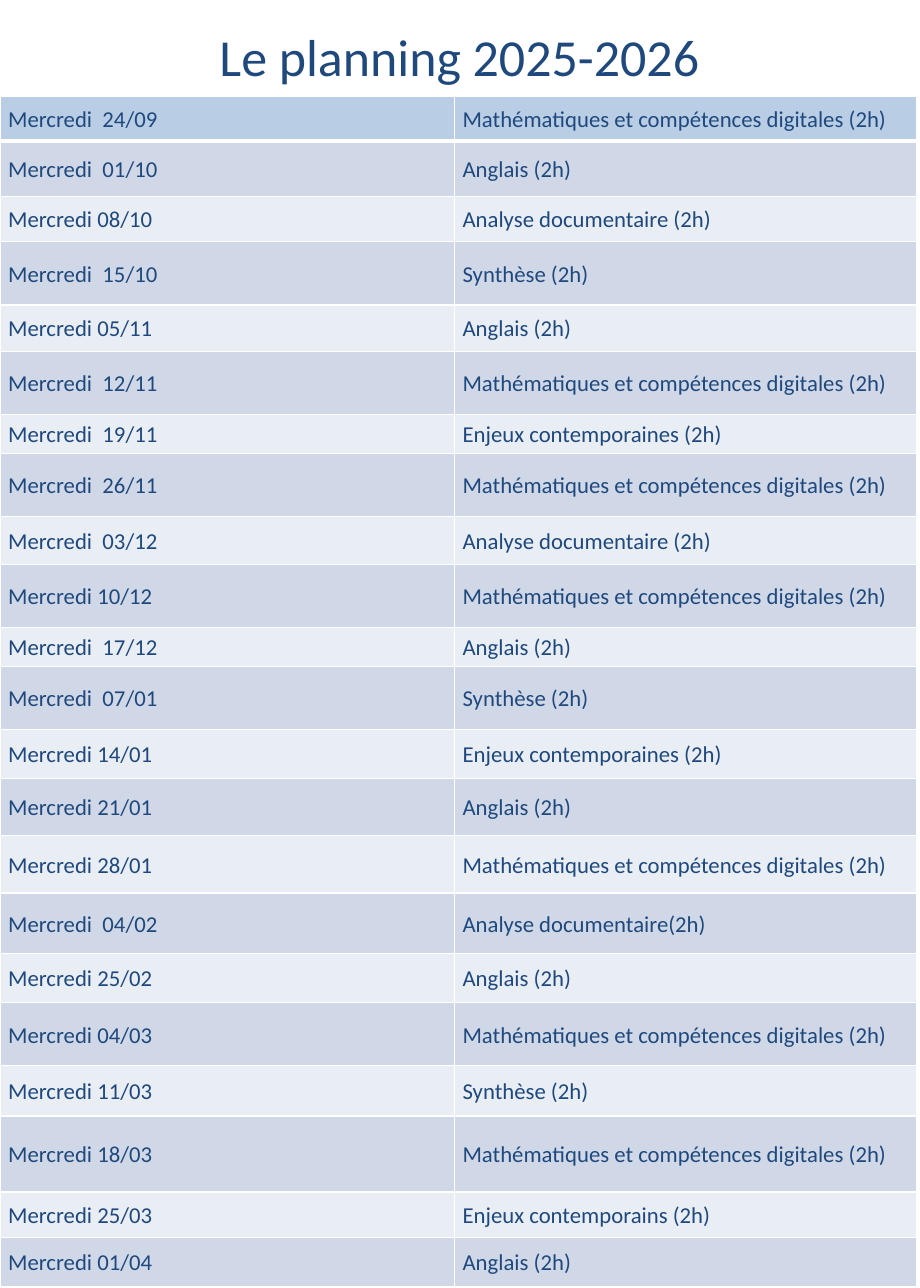
from lxml import etree
from pptx import Presentation
from pptx.dml.color import RGBColor
from pptx.enum import text
from pptx.oxml import ns
from pptx.util import Emu, Inches, Pt

SLIDE_WIDTH = Emu(7200900)
SLIDE_HEIGHT = Emu(10080625)
NAVY = "1F497D"
HEADER_FILL = "B9CDE5"
BAND_FILLS = ("E9EDF4", "D0D8E8")
COLUMN_WIDTHS = (3.89, 3.96)

MATHS = "Mathématiques et compétences digitales (2h)"
ENGLISH = "Anglais (2h)"
ANALYSIS = "Analyse documentaire (2h)"
SYNTHESIS = "Synthèse (2h)"
ISSUES = "Enjeux contemporaines (2h)"

SESSIONS = (
    ("Mercredi  24/09", MATHS, 0.39),
    ("Mercredi  01/10", ENGLISH, 0.47),
    ("Mercredi 08/10", ANALYSIS, 0.39),
    ("Mercredi  15/10", SYNTHESIS, 0.54),
    ("Mercredi 05/11", ENGLISH, 0.4),
    ("Mercredi  12/11", MATHS, 0.54),
    ("Mercredi  19/11", ISSUES, 0.31),
    ("Mercredi  26/11", MATHS, 0.54),
    ("Mercredi  03/12", ANALYSIS, 0.41),
    ("Mercredi 10/12", MATHS, 0.54),
    ("Mercredi  17/12", ENGLISH, 0.33),
    ("Mercredi  07/01", SYNTHESIS, 0.54),
    ("Mercredi 14/01", ISSUES, 0.42),
    ("Mercredi 21/01", ENGLISH, 0.49),
    ("Mercredi 28/01", MATHS, 0.49),
    ("Mercredi  04/02", "Analyse documentaire(2h)", 0.52),
    ("Mercredi 25/02", ENGLISH, 0.42),
    ("Mercredi 04/03", MATHS, 0.54),
    ("Mercredi 11/03", SYNTHESIS, 0.43),
    ("Mercredi 18/03", MATHS, 0.65),
    ("Mercredi 25/03", "Enjeux contemporains (2h)", 0.39),
    ("Mercredi 01/04", ENGLISH, 0.42),
)


def color(value):
    return RGBColor.from_string(value)


def style_font(font, size):
    font.name = "Calibri"
    font.size = Pt(size)
    font.bold = False
    font.color.rgb = color(NAVY)


def add_title(page, left, top, width, height):
    title = page.shapes.title
    title.left, title.top = Inches(left), Inches(top)
    title.width, title.height = Inches(width), Inches(height)
    frame = title.text_frame
    frame.text = "Le planning 2025-2026"
    frame.word_wrap = True
    frame.auto_size = text.MSO_AUTO_SIZE.NONE
    frame.vertical_anchor = text.MSO_ANCHOR.TOP
    para = frame.paragraphs[0]
    para.alignment = text.PP_ALIGN.CENTER
    style_font(para.runs[0].font, 32)


def set_borders(cell, bottom):
    properties = cell._tc.get_or_add_tcPr()
    for side, points in (("L", 1), ("R", 1), ("T", 1), ("B", bottom)):
        line = etree.SubElement(properties, ns.qn(f"a:ln{side}"), w=str(int(Pt(points))))
        fill = etree.SubElement(line, ns.qn("a:solidFill"))
        etree.SubElement(fill, ns.qn("a:srgbClr"), val="FFFFFF")


def fill_cell(cell, wording, row):
    set_borders(cell, 1 if row else 3)
    cell.fill.solid()
    cell.fill.fore_color.rgb = color(BAND_FILLS[row % 2] if row else HEADER_FILL)
    cell.margin_left = cell.margin_right = Inches(0.07)
    cell.margin_top = cell.margin_bottom = Inches(0.04)
    cell.vertical_anchor = text.MSO_ANCHOR.MIDDLE
    cell.text_frame.text = wording
    para = cell.text_frame.paragraphs[0]
    para.line_spacing = 1.07
    para.space_after = Pt(8)
    style_font(para.runs[0].font, 14)


def add_schedule(page, left, top, width, height):
    frame = page.shapes.add_table(
        len(SESSIONS), len(COLUMN_WIDTHS),
        Inches(left), Inches(top), Inches(width), Inches(height))
    table = frame.table
    for column, column_width in zip(table.columns, COLUMN_WIDTHS):
        column.width = Inches(column_width)
    for row, (date, subject, row_height) in enumerate(SESSIONS):
        table.rows[row].height = Inches(row_height)
        for column, wording in enumerate((date, subject)):
            fill_cell(table.cell(row, column), wording, row)


def main():
    deck = Presentation()
    deck.slide_width, deck.slide_height = SLIDE_WIDTH, SLIDE_HEIGHT
    deck.element.sldSz.attrib.pop("type", None)
    page = deck.slides.add_slide(deck.slide_layouts[5])
    add_title(page, 0.02, 0.16, 7.83, 0.64)
    add_schedule(page, 0, 0.82, 7.85, 10.2)
    deck.save("out.pptx")


if __name__ == "__main__":
    main()
